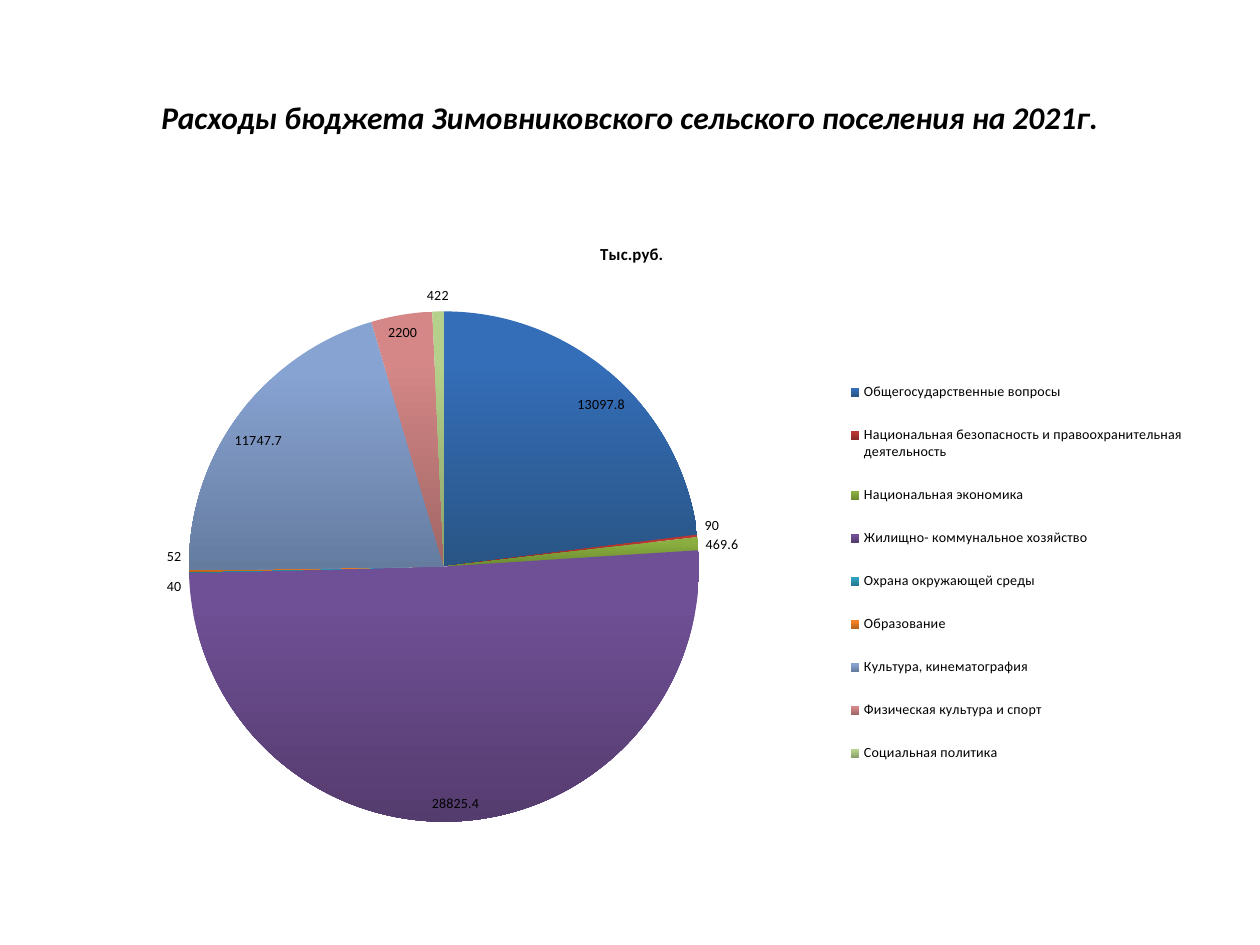
from lxml import etree
from pptx import Presentation
from pptx.chart.data import CategoryChartData as ChartData
from pptx.dml.color import RGBColor as Rgb
from pptx.enum.chart import XL_CHART_TYPE as Kind, XL_LABEL_POSITION as Spot
from pptx.enum.chart import XL_LEGEND_POSITION as Side
from pptx.enum.text import MSO_ANCHOR as Anchor, PP_ALIGN as Align
from pptx.oxml.ns import qn
from pptx.util import Inches, Pt

HUES = {
    "text": "000000",
    "blue": ("346DB8", "295585"),
    "red": ("B93632", "8A2A27"),
    "green": ("8AAE40", "6C8A30"),
    "violet": ("6F4F95", "553C6E"),
    "teal": ("2FA0BF", "25788F"),
    "orange": ("F58220", "B8621B"),
    "sky": ("87A3D2", "657C9F"),
    "rose": ("D48786", "A06665"),
    "lime": ("B4D08A", "8BA06A"),
}
COSTS = [
    ("Общегосударственные вопросы", 13097.8, "blue"),
    ("Национальная безопасность и правоохранительная деятельность", 90, "red"),
    ("Национальная экономика", 469.6, "green"),
    ("Жилищно- коммунальное хозяйство", 28825.4, "violet"),
    ("Охрана окружающей среды", 40, "teal"),
    ("Образование", 52, "orange"),
    ("Культура, кинематография", 11747.7, "sky"),
    ("Физическая культура и спорт", 2200, "rose"),
    ("Социальная политика", 422, "lime"),
]
BASE = {"name": "Calibri", "size": Pt(8), "bold": False}
UNIT = {**BASE, "size": Pt(9.6), "bold": True}
HEAD = {**BASE, "size": Pt(18), "bold": True, "italic": True}


def style(font, look):
    """Apply a dict of format values and the text colour to a font."""
    for key, val in look.items():
        setattr(font, key, val)
    font.color.rgb = Rgb.from_string(HUES["text"])


def place(node, index, **parts):
    """Give a chart part a manual layout in fractions of the chart."""
    for old in node.findall(qn("c:layout")):
        node.remove(old)
    layout = etree.Element(qn("c:layout"))
    manual = etree.SubElement(layout, qn("c:manualLayout"))
    modes = {"xMode": "edge", "yMode": "edge"}
    if index == 0:
        modes = {"layoutTarget": "inner", **modes}
    for key, val in {**modes, **parts}.items():
        etree.SubElement(manual, qn(f"c:{key}")).set("val", str(val))
    node.insert(index, layout)


def shade(fill, pair):
    """Fill a slice from a light top to a dark base."""
    fill.gradient()
    fill.gradient_angle = 270
    for stop, hue, pos in zip(fill.gradient_stops, pair, (0.2, 1)):
        stop.color.rgb = Rgb.from_string(hue)
        stop.position = pos


def add_head(slide, box):
    """Write the slide title in the middle of its box."""
    frame = slide.shapes.add_textbox(*box).text_frame
    frame.word_wrap = True
    frame.vertical_anchor = Anchor.MIDDLE
    para = frame.paragraphs[0]
    para.alignment = Align.CENTER
    run = para.add_run()
    run.text = "Расходы бюджета Зимовниковского сельского поселения на 2021г."
    style(run.font, HEAD)


def add_pie(slide, box):
    """Draw the budget pie with its title, labels and legend."""
    names, sums, hues = zip(*COSTS)
    data = ChartData()
    data.categories = names
    data.add_series("Тыс.руб.", sums)
    chart = slide.shapes.add_chart(Kind.PIE, *box, data).chart
    style(chart.font, BASE)

    chart.has_title = True
    frame = chart.chart_title.text_frame
    frame.text = "Тыс.руб."
    style(frame.paragraphs[0].runs[0].font, UNIT)

    chart.has_legend = True
    legend = chart.legend
    legend.position = Side.RIGHT
    legend.include_in_layout = False
    style(legend.font, BASE)

    plot = chart.plots[0]
    plot.vary_by_categories = True
    for index, hue in enumerate(hues):
        shade(plot.series[0].points[index].format.fill, HUES[hue])
    plot.has_data_labels = True
    labels = plot.data_labels
    style(labels.font, BASE)
    form = {"show_value": True, "show_percentage": False, "number_format": "General",
            "number_format_is_linked": False, "position": Spot.BEST_FIT}
    for key, val in form.items():
        setattr(labels, key, val)

    area = chart.element.find(".//" + qn("c:plotArea"))
    place(area, 0, x=0.11, y=0.15, w=0.45, h=0.83)
    place(chart.element.find(".//" + qn("c:title")), 1, x=0.47, y=0.04)
    place(chart.element.find(".//" + qn("c:legend")), 1, x=0.69, y=0.23, w=0.3, h=0.69)


def main():
    """Build the budget slide and save it."""
    deck = Presentation()
    deck.slide_width, deck.slide_height = Inches(10), Inches(7.5)
    slide = deck.slides.add_slide(deck.slide_layouts[6])
    add_head(slide, [Inches(n) for n in (0.5, 0.3, 9, 1.25)])
    add_pie(slide, [Inches(n) for n in (0.51, 1.7, 9, 4.95)])
    deck.save("out.pptx")


if __name__ == "__main__":
    main()
